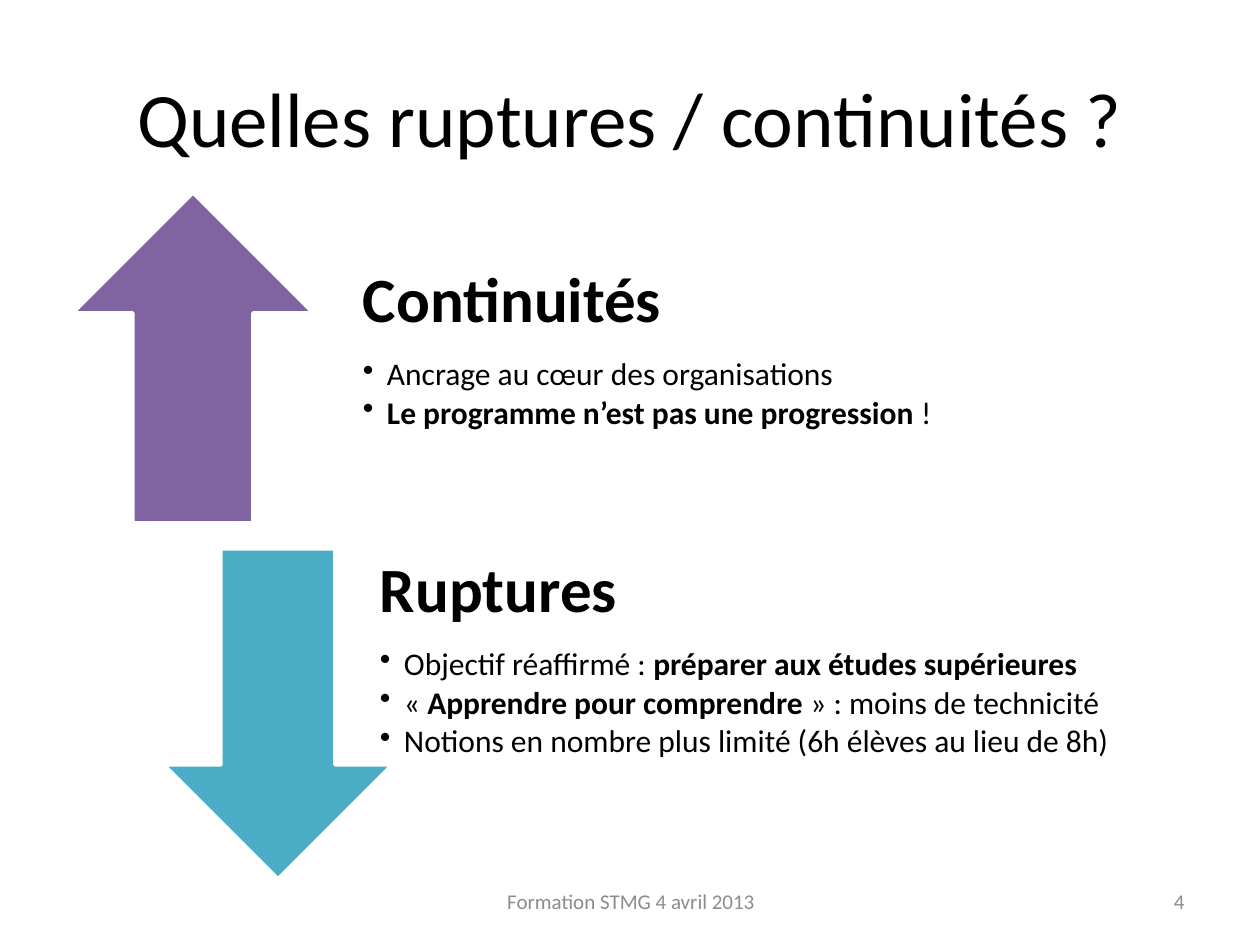
from dataclasses import dataclass
from lxml.etree import SubElement
from pptx import Presentation
from pptx.dml.color import RGBColor
from pptx.enum.shapes import MSO_SHAPE
from pptx.enum.text import MSO_ANCHOR, PP_ALIGN
from pptx.oxml.ns import qn
from pptx.util import Pt


@dataclass(frozen=True)
class Theme:
    font: str = "Calibri"
    ink: str = "000000"
    grey: str = "8C8C8C"
    white: str = "FFFFFF"
    up: str = "8064A2"
    down: str = "4BACC6"
    title: int = 44
    head: int = 36
    body: int = 18
    foot: int = 12


T = Theme()
SCALE = 914400 / 126


def px(n):
    return round(n * SCALE)


def add_run(para, text, size, color=T.ink, bold=False):
    run = para.add_run()
    run.text = text
    font = run.font
    font.name, font.size, font.bold = T.font, Pt(size), bold
    font.color.rgb = RGBColor.from_string(color)


def add_frame(slide, box):
    frame = slide.shapes.add_textbox(*map(px, box)).text_frame
    frame.word_wrap = True
    frame.vertical_anchor = MSO_ANCHOR.MIDDLE
    return frame


def add_line(slide, box, text, size, color, align):
    para = add_frame(slide, box).paragraphs[0]
    para.alignment = align
    add_run(para, text, size, color)


def add_bullet(para):
    props = para._p.get_or_add_pPr()
    props.set("marL", str(px(24)))
    props.set("indent", str(px(-24)))
    SubElement(props, qn("a:buChar")).set("char", "•")


def add_arrow(slide, box, kind, color):
    arrow = slide.shapes.add_shape(kind, *map(px, box))
    arrow.shadow.inherit = False
    arrow.fill.solid()
    arrow.fill.fore_color.rgb = RGBColor.from_string(color)
    arrow.line.color.rgb = RGBColor.from_string(T.white)
    arrow.line.width = Pt(2)


def add_points(slide, box, head, points):
    frame = add_frame(slide, box)
    frame.margin_left = frame.margin_right = frame.margin_bottom = px(18)
    frame.margin_top = 0
    para = frame.paragraphs[0]
    para.line_spacing = 0.9
    para.space_after = Pt(T.head * 0.35)
    add_run(para, head, T.head, bold=True)
    for point in points:
        para = frame.add_paragraph()
        para.level = 1
        para.line_spacing = 0.9
        para.space_after = Pt(T.body * 0.15)
        add_bullet(para)
        for text, bold in point:
            add_run(para, text, T.body, bold=bold)


def add_foot(slide, box):
    left, top, width, height = box
    add_line(slide, (left + 472, top, 294, height), "4",
             T.foot, T.grey, PP_ALIGN.RIGHT)
    add_line(slide, (left, top, 400, height), "Formation STMG 4 avril 2013",
             T.foot, T.grey, PP_ALIGN.CENTER)


def main():
    deck = Presentation()
    deck.slide_width, deck.slide_height = px(1260), px(945)
    slide = deck.slides.add_slide(deck.slide_layouts[6])
    add_line(slide, (63, 38, 1134, 157), "Quelles ruptures / continuités ?",
             T.title, T.ink, PP_ALIGN.CENTER)
    add_arrow(slide, (73, 193, 240, 330), MSO_SHAPE.UP_ARROW, T.up)
    add_points(slide, (345, 214, 653, 290), "Continuités", [
        [("Ancrage au cœur des organisations", False)],
        [("Le programme n’est pas une progression ", True), ("!", False)],
    ])
    add_arrow(slide, (164, 549, 228, 330), MSO_SHAPE.DOWN_ARROW, T.down)
    add_points(slide, (362, 503, 874, 330), "Ruptures", [
        [("Objectif réaffirmé : ", False),
         ("préparer aux études supérieures", True)],
        [("« ", False), ("Apprendre pour comprendre", True),
         (" » : moins de technicité", False)],
        [("Notions en nombre plus limité (6h élèves au lieu de 8h)", False)],
    ])
    add_foot(slide, (431, 876, 766, 50))
    deck.save("out.pptx")


if __name__ == "__main__":
    main()
